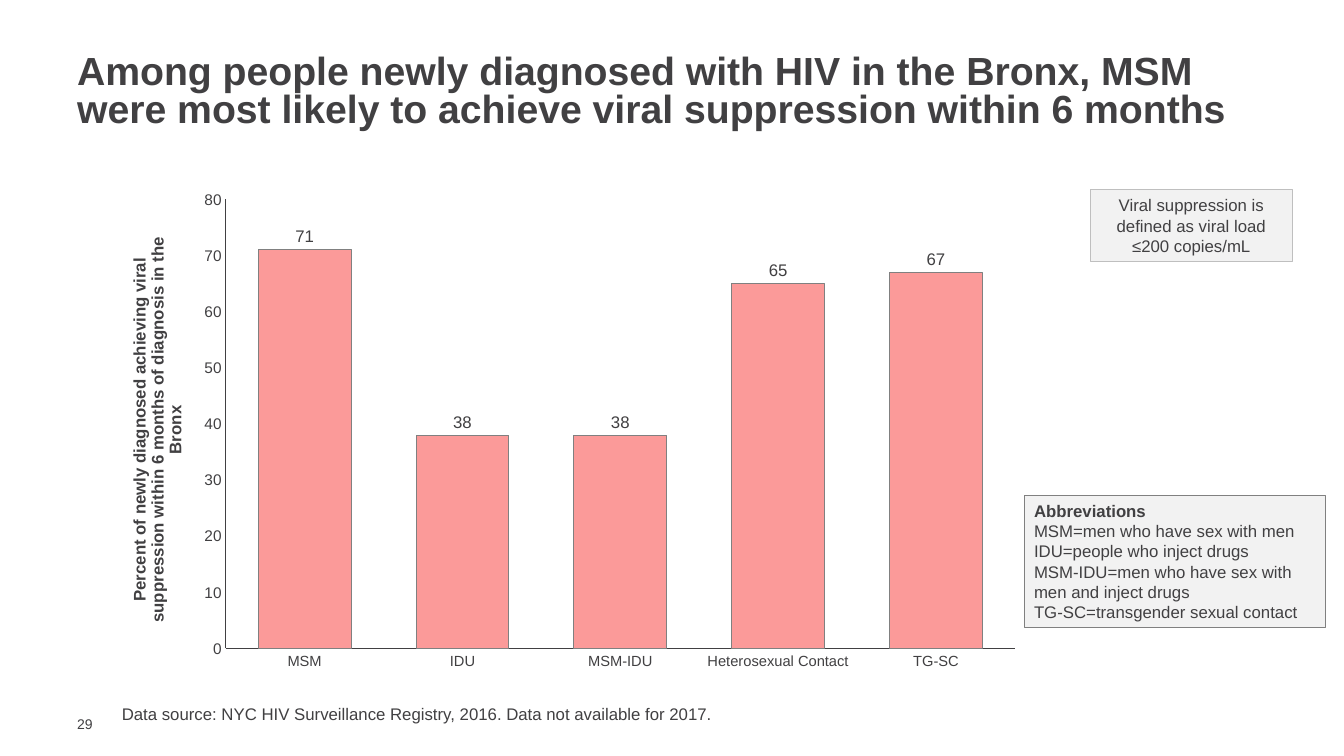
"""Build the slide on viral suppression among people newly diagnosed with HIV in the Bronx."""
from lxml import etree
from pptx import Presentation
from pptx import util as u
from pptx.chart import data as chart_data
from pptx.dml.color import RGBColor
from pptx.enum import chart as kinds, shapes, text

COLOURS = {"ink": "414042", "bar": "FB9A99", "edge": "808080", "pale_edge": "BFBFBF", "panel": "F2F2F2"}
FONT = "Arial"


def colour(name):
    return RGBColor.from_string(COLOURS[name])


def add_text(left, top, width, height, lines, size=12, bold=False, align=text.PP_ALIGN.LEFT,
             anchor=text.MSO_ANCHOR.TOP, spacing=None, edge=None, inset=3.6):
    area = [u.Pt(value) for value in (left, top, width, height)]
    if edge:
        box = page.shapes.add_shape(shapes.MSO_SHAPE.RECTANGLE, *area)
        box.shadow.inherit = False
        box.fill.solid()
        box.fill.fore_color.rgb = colour("panel")
        box.line.color.rgb = colour(edge)
        box.line.width = u.Pt(0.75)
    else:
        box = page.shapes.add_textbox(*area)
    frame = box.text_frame
    frame.word_wrap = True
    frame.vertical_anchor = anchor
    frame.margin_top = frame.margin_bottom = u.Pt(inset)
    frame.text = "\n".join(lines)
    for para in frame.paragraphs:
        para.alignment = align
        para.line_spacing = spacing
        for span in para.runs:
            span.font.name = FONT
            span.font.size = u.Pt(size)
            span.font.bold = bold
            span.font.color.rgb = colour("ink")
    return box


deck = Presentation()
deck.slide_width, deck.slide_height = u.Pt(960), u.Pt(540)
page = deck.slides.add_slide(deck.slide_layouts[6])

add_text(48, 511.2, 31, 12.2, ["29"], size=10, anchor=text.MSO_ANCHOR.MIDDLE, inset=0)
add_text(48, 36, 874.8, 61.2,
         ["Among people newly diagnosed with HIV in the Bronx, MSM were most likely "
          "to achieve viral suppression within 6 months"],
         size=28, bold=True, anchor=text.MSO_ANCHOR.MIDDLE, spacing=0.8)

rates = chart_data.CategoryChartData(number_format="0")
rates.categories = ["MSM", "IDU", "MSM-IDU", "Heterosexual Contact", "TG-SC"]
rates.add_series("Series 1", [71, 38, 38, 65, 67])
chart = page.shapes.add_chart(kinds.XL_CHART_TYPE.COLUMN_CLUSTERED, u.Pt(90), u.Pt(131.8),
                              u.Pt(648), u.Pt(356.4), rates).chart
chart.has_legend = False
chart.has_title = False
chart.font.name = FONT
chart.font.size = u.Pt(10)
chart.font.color.rgb = colour("ink")

for axis, size in ((chart.category_axis, 10.5), (chart.value_axis, 11)):
    axis.has_major_gridlines = False
    axis.major_tick_mark = axis.minor_tick_mark = kinds.XL_TICK_MARK.NONE
    axis.tick_labels.font.name = FONT
    axis.tick_labels.font.size = u.Pt(size)
    axis.tick_labels.font.color.rgb = colour("ink")
    axis.format.line.color.rgb = colour("ink")
    axis.format.line.width = u.Pt(0.75)

percent = chart.value_axis
percent.minimum_scale, percent.maximum_scale, percent.major_unit = 0, 80, 10
percent.tick_labels.number_format = "0"
percent.tick_labels.number_format_is_linked = False
title_frame = percent.axis_title.text_frame
title_frame.text = ("Percent of newly diagnosed achieving viral suppression "
                    "within 6 months of diagnosis in the Bronx")
title_font = title_frame.paragraphs[0].runs[0].font
title_font.name, title_font.size, title_font.bold = FONT, u.Pt(12), True
title_font.color.rgb = colour("ink")

plot = chart.plots[0]
plot.gap_width, plot.overlap = 70, -27
plot.vary_by_categories = False
bars = plot.series[0]
bars.format.fill.solid()
bars.format.fill.fore_color.rgb = colour("bar")
bars.format.line.color.rgb = colour("edge")
bars.format.line.width = u.Pt(0.75)
labels = bars.data_labels
labels.show_value = True
labels.position = kinds.XL_LABEL_POSITION.OUTSIDE_END
labels.number_format = "0"
labels.number_format_is_linked = False
labels.font.name, labels.font.size = FONT, u.Pt(12)
labels.font.color.rgb = colour("ink")

C = "{http://schemas.openxmlformats.org/drawingml/2006/chart}"
plot_area = chart.element.find(f".//{C}plotArea")
for layout in plot_area.findall(f"{C}layout"):
    plot_area.remove(layout)
layout = etree.Element(f"{C}layout")
plot_area.insert(0, layout)
manual = etree.SubElement(layout, f"{C}manualLayout")
for tag, value in (("layoutTarget", "inner"), ("xMode", "edge"), ("yMode", "edge"),
                   ("x", 0.11), ("y", 0.03), ("w", 0.87), ("h", 0.9)):
    etree.SubElement(manual, C + tag, val=str(value))

add_text(779, 135.4, 144, 51.1, ["Viral suppression is defined as viral load ≤200 copies/mL"],
         align=text.PP_ALIGN.CENTER, anchor=text.MSO_ANCHOR.MIDDLE, edge="pale_edge")
add_text(79.9, 499, 699.1, 21.6,
         ["Data source: NYC HIV Surveillance Registry, 2016. Data not available for 2017."])
abbreviations = add_text(731.5, 354.2, 215.3, 94.3,
                         ["Abbreviations", "MSM=men who have sex with men", "IDU=people who inject drugs",
                          "MSM-IDU=men who have sex with men and inject drugs",
                          "TG-SC=transgender sexual contact"], edge="edge")
abbreviations.text_frame.paragraphs[0].runs[0].font.bold = True

deck.save("out.pptx")
